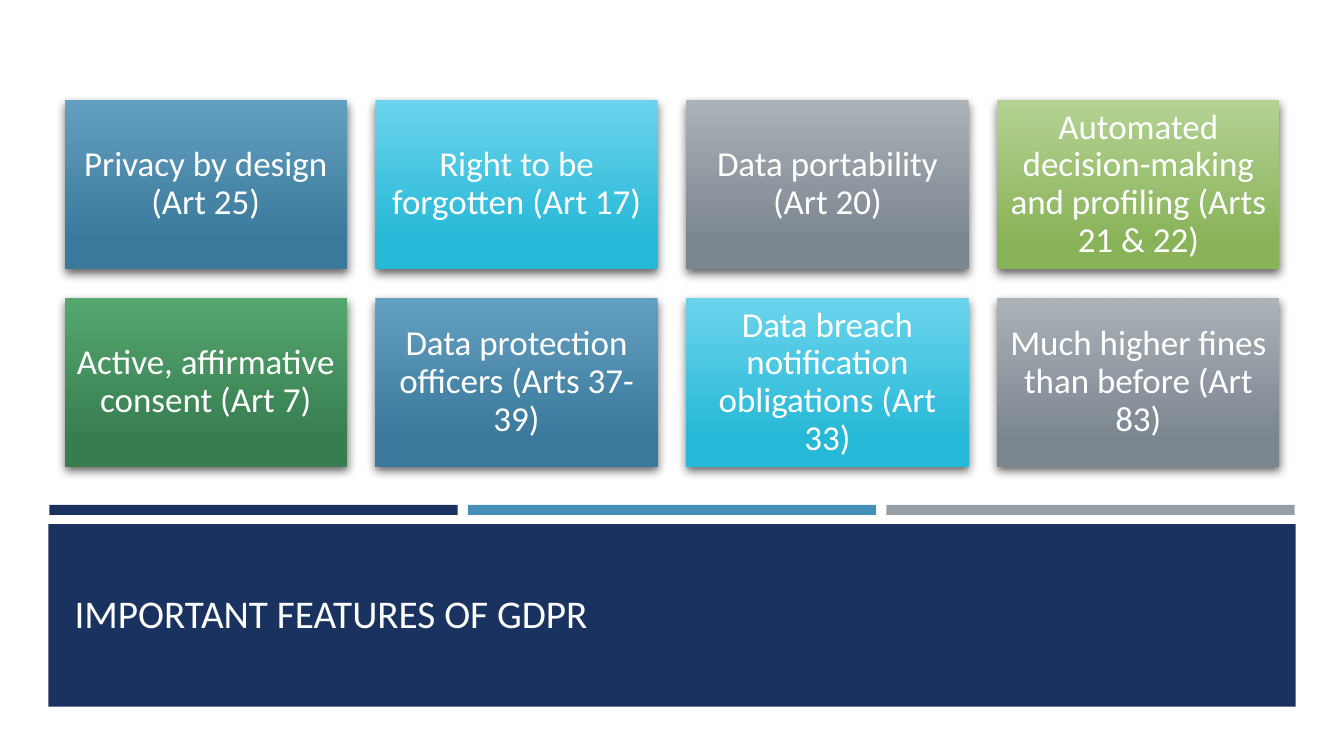
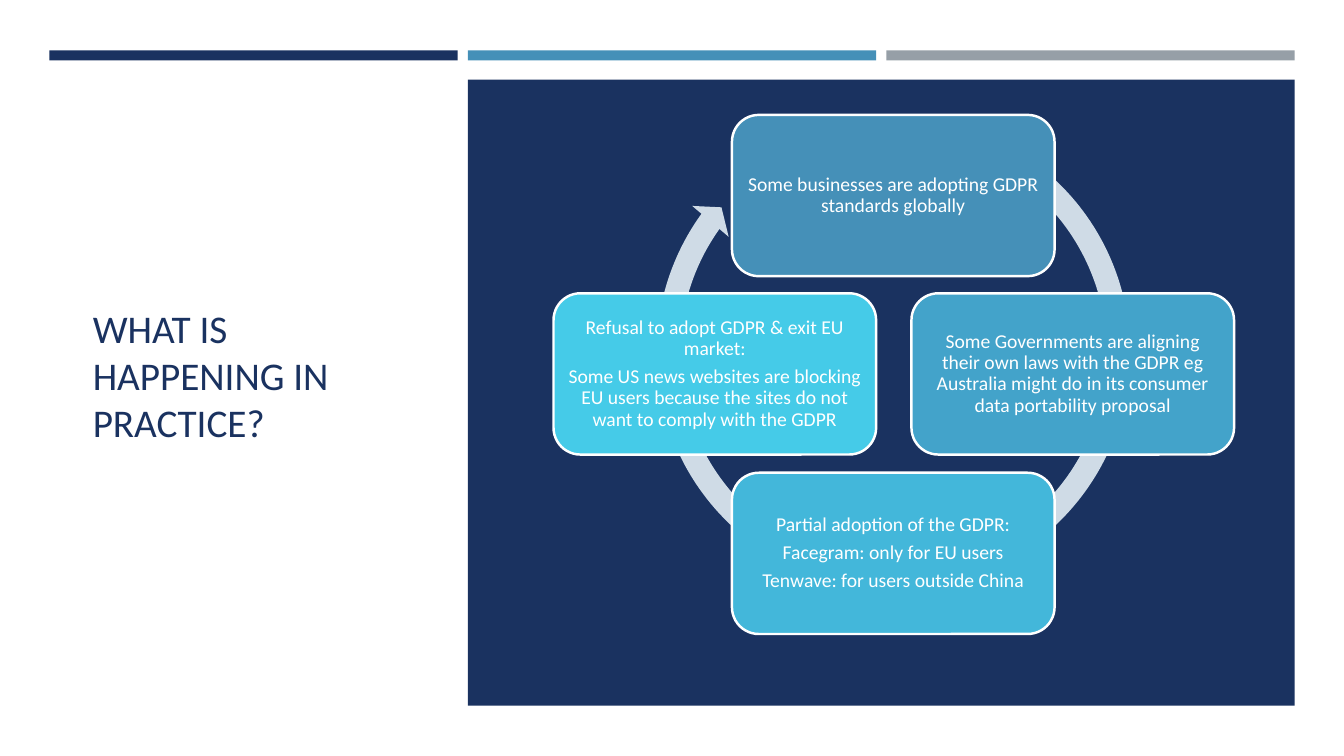
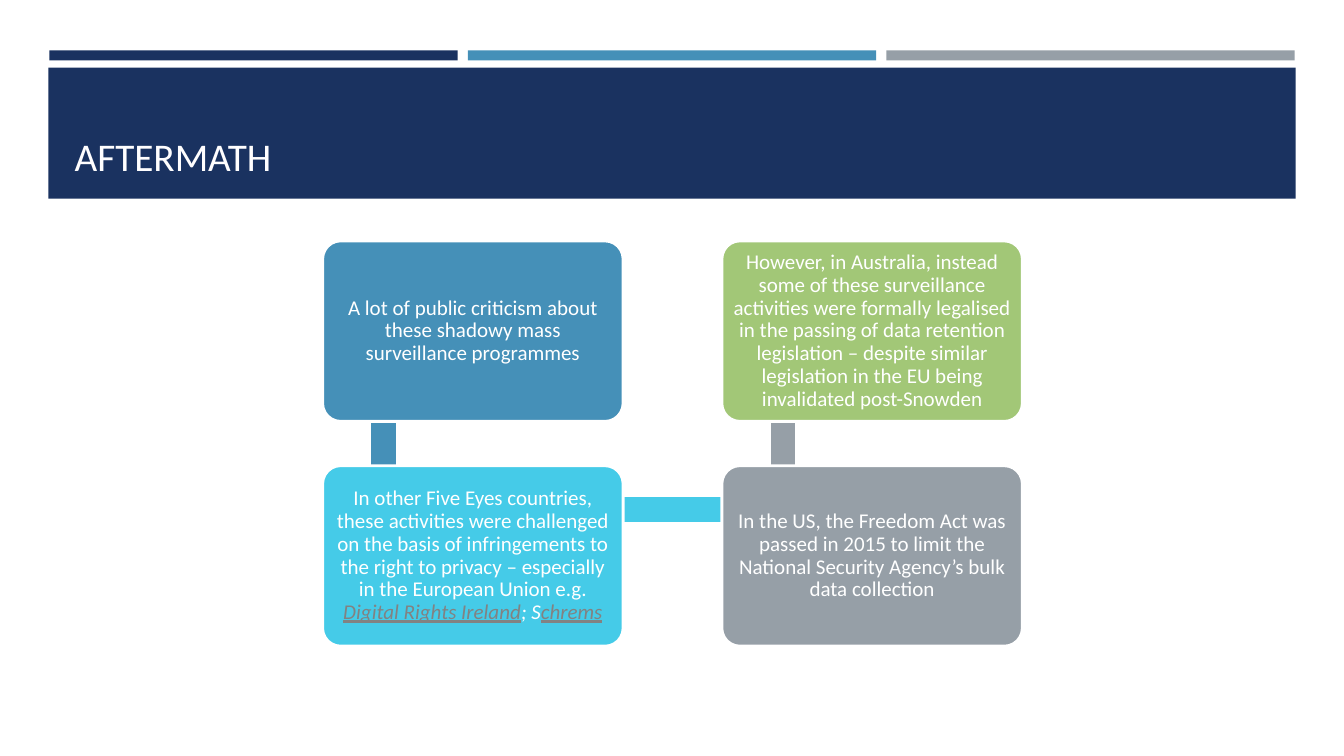
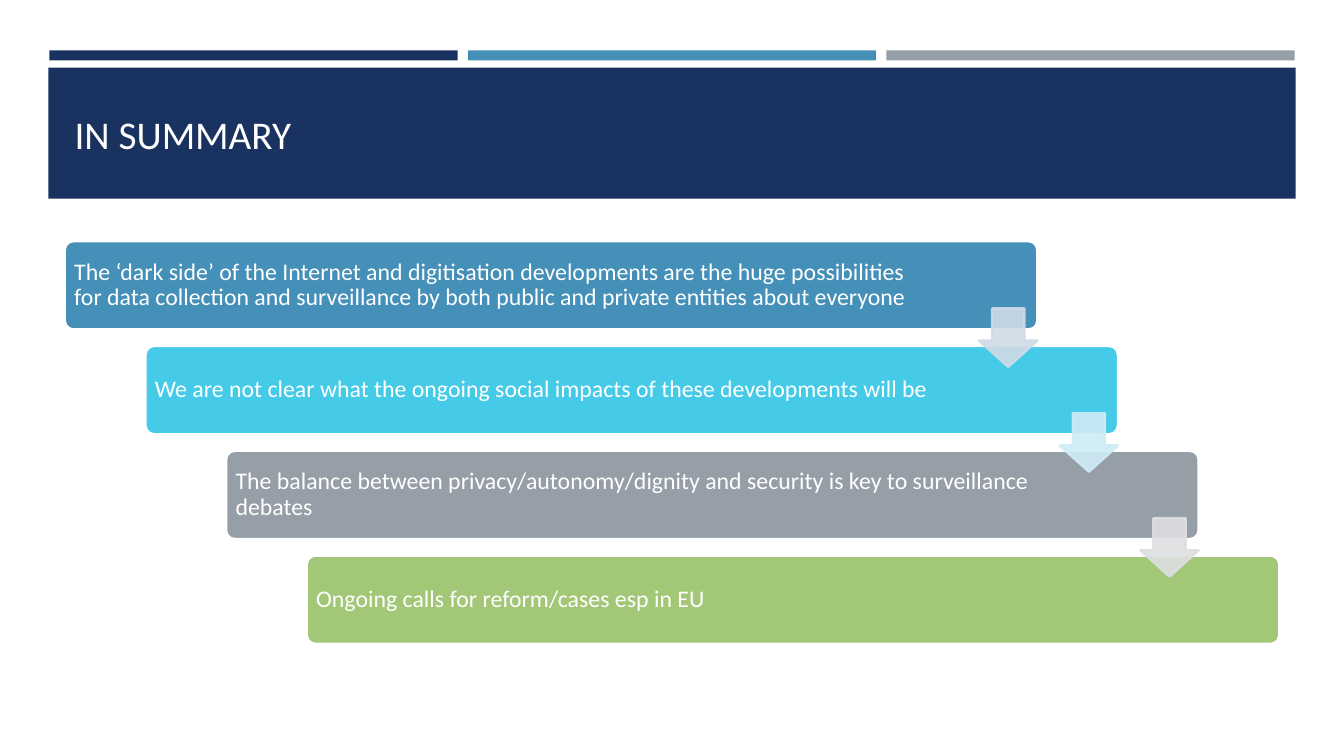
"""Build a four-slide deck on data protection and surveillance."""
from dataclasses import dataclass
from typing import Optional, Sequence, Union

from lxml import etree
from pptx import Presentation
from pptx.dml.color import RGBColor
from pptx.enum.shapes import MSO_SHAPE
from pptx.enum.text import MSO_ANCHOR, MSO_AUTO_SIZE, PP_ALIGN
from pptx.oxml.ns import qn
from pptx.presentation import Presentation as Deck
from pptx.shapes.autoshape import Shape
from pptx.slide import Slide
from pptx.text.text import TextFrame
from pptx.util import Inches, Pt

RECT = MSO_SHAPE.RECTANGLE
ROUNDED = MSO_SHAPE.ROUNDED_RECTANGLE
DOWN_ARROW = MSO_SHAPE.DOWN_ARROW
CIRCULAR_ARROW = MSO_SHAPE.CIRCULAR_ARROW
MIDDLE, BOTTOM = MSO_ANCHOR.MIDDLE, MSO_ANCHOR.BOTTOM
LEFT, CENTER = PP_ALIGN.LEFT, PP_ALIGN.CENTER
NO_AUTOFIT = MSO_AUTO_SIZE.NONE

FONT = "Calibri"
TITLE_ONLY_LAYOUT = 5
NAVY, BLUE, CYAN, GREY, GREEN = "1A3260", "4590B8", "45CBE8", "969FA7", "A2C777"
WHITE, TITLE_WHITE, LINK_GREY = "FFFFFF", "FFFEFF", "828282"
BLUE_FADE, CYAN_FADE = ("639FC1", "3A799B"), ("6BD4EC", "26B8D7")
GREY_FADE, GREEN_FADE = ("ABB2B8", "7C868F"), ("B4D293", "89B359")
DARK_GREEN_FADE = ("55A770", "377D50")


@dataclass(frozen=True)
class Box:
    """A rectangle on the slide, in inches."""
    left: float
    top: float
    width: float
    height: float


@dataclass(frozen=True)
class Span:
    """A stretch of text with its own format."""
    text: str
    color: str = WHITE
    italic: bool = False
    underline: bool = False


Para = Union[str, Sequence[Span]]


@dataclass(frozen=True)
class Card:
    """A filled box with its place and paragraphs."""
    left: float
    top: float
    fill: str
    paras: Sequence[Para]


@dataclass(frozen=True)
class Feature:
    """A gradient tile of the feature grid."""
    text: str
    fade: tuple[str, str]


@dataclass(frozen=True)
class Step:
    """A stair of the summary, with the arrow that leads on from it."""
    text: str
    fill: str
    right_inset: float
    arrow: Optional[str] = None


FEATURES = (
    Feature("Privacy by design (Art 25)", BLUE_FADE),
    Feature("Right to be forgotten (Art 17)", CYAN_FADE),
    Feature("Data portability (Art 20)", GREY_FADE),
    Feature("Automated decision-making and profiling (Arts 21 & 22)", GREEN_FADE),
    Feature("Active, affirmative consent (Art 7)", DARK_GREEN_FADE),
    Feature("Data protection officers (Arts 37-39)", BLUE_FADE),
    Feature("Data breach notification obligations (Art 33)", CYAN_FADE),
    Feature("Much higher fines than before (Art 83)", GREY_FADE),
)

PRACTICES = (
    Card(7.26, 1.14, BLUE, ("Some businesses are adopting GDPR standards globally",)),
    Card(9.04, 2.91, "43A3CA", (
        "Some Governments are aligning their own laws with the GDPR eg "
        "Australia might do in its consumer data portability proposal",)),
    Card(7.26, 4.69, "43B7DA", (
        "Partial adoption of the GDPR:",
        "Facegram: only for EU users",
        "Tenwave: for users outside China")),
    Card(5.49, 2.91, CYAN, (
        "Refusal to adopt GDPR & exit EU market:",
        "Some US news websites are blocking EU users because the sites do not "
        "want to comply with the GDPR")),
)

EVENTS = (
    Card(3.2, 2.39, BLUE, (
        "A lot of public criticism about these shadowy mass surveillance programmes",)),
    Card(3.2, 4.62, CYAN, ((
        Span("In other Five Eyes countries, these activities were challenged on the "
             "basis of infringements to the right to privacy – especially in the "
             "European Union e.g. "),
        Span("Digital Rights Ireland", LINK_GREY, italic=True, underline=True),
        Span("; S", italic=True),
        Span("chrems", LINK_GREY, italic=True, underline=True)),)),
    Card(7.16, 4.62, GREY, (
        "In the US, the Freedom Act was passed in 2015 to limit the National "
        "Security Agency’s bulk data collection",)),
    Card(7.16, 2.39, GREEN, (
        "However, in Australia, instead some of these surveillance activities were "
        "formally legalised in the passing of data retention legislation – despite "
        "similar legislation in the EU being invalidated post-Snowden",)),
)

EVENT_LINKS = (
    (Box(3.67, 2.84, 0.27, 2.22), BLUE),
    (Box(3.8, 4.92, 3.95, 0.27), CYAN),
    (Box(7.63, 2.84, 0.27, 2.22), GREY),
)

STEPS = (
    Step("The ‘dark side’ of the Internet and digitisation developments are the huge "
         "possibilities for data collection and surveillance by both public and "
         "private entities about everyone", BLUE, 1.05, "CFDBE6"),
    Step("We are not clear what the ongoing social impacts of these developments "
         "will be", CYAN, 1.45, "CFECF6"),
    Step("The balance between privacy/autonomy/dignity and security is key to "
         "surveillance debates", GREY, 1.45, "DDDFE1"),
    Step("Ongoing calls for reform/cases esp in EU", GREEN, 1.45),
)


def rgb(color: str) -> RGBColor:
    """Turn a hex string into a colour."""
    return RGBColor.from_string(color)


def write(frame: TextFrame, paras: Sequence[Para], *, size: float, color: str = WHITE,
          align: PP_ALIGN = CENTER, anchor: MSO_ANCHOR = MIDDLE, inset: float = 0.1,
          right_inset: Optional[float] = None, line_spacing: float = 0.9,
          space_after: float = 0.35) -> None:
    """Fill a text frame with formatted paragraphs."""
    frame.word_wrap = True
    frame.auto_size = NO_AUTOFIT
    frame.vertical_anchor = anchor
    frame.margin_left = frame.margin_top = frame.margin_bottom = Inches(inset)
    frame.margin_right = Inches(inset if right_inset is None else right_inset)
    for index, content in enumerate(paras):
        para = frame.paragraphs[0] if index == 0 else frame.add_paragraph()
        para.alignment = align
        para.line_spacing = line_spacing
        para.space_before = Pt(0)
        para.space_after = Pt(round(size * space_after, 1))
        spans = (Span(content, color),) if isinstance(content, str) else content
        for span in spans:
            run = para.add_run()
            run.text = span.text
            run.font.name = FONT
            run.font.size = Pt(size)
            run.font.color.rgb = rgb(span.color)
            run.font.italic = span.italic
            run.font.underline = span.underline


def add_box(slide: Slide, kind: MSO_SHAPE, box: Box, fill: str, *,
            line: Optional[str] = None, line_width: float = 2,
            adjustments: Sequence[float] = ()) -> Shape:
    """Draw a flat preset shape."""
    shape = slide.shapes.add_shape(kind, Inches(box.left), Inches(box.top),
                                   Inches(box.width), Inches(box.height))
    shape.shadow.inherit = False
    shape.fill.solid()
    shape.fill.fore_color.rgb = rgb(fill)
    if line:
        shape.line.color.rgb = rgb(line)
        shape.line.width = Pt(line_width)
    else:
        shape.line.fill.background()
    for index, value in enumerate(adjustments):
        shape.adjustments[index] = value
    return shape


def fade(shape: Shape, colors: tuple[str, str]) -> None:
    """Fill a shape with a downward gradient."""
    shape.fill.gradient()
    shape.fill.gradient_angle = 270
    for stop, color, position in zip(shape.fill.gradient_stops, colors, (0, 0.84)):
        stop.color.rgb = rgb(color)
        stop.position = position


def cast_shadow(shape: Shape) -> None:
    """Give a shape a soft black shadow below it."""
    effects = shape.element.spPr.find(qn("a:effectLst"))
    shadow = etree.SubElement(effects, qn("a:outerShdw"), blurRad=str(Pt(7)),
                              dist=str(Pt(3)), dir="5040000", rotWithShape="0")
    black = etree.SubElement(shadow, qn("a:srgbClr"), val="000000")
    etree.SubElement(black, qn("a:alpha"), val="60000")


def make_translucent(shape: Shape, percent: int) -> None:
    """Set the opacity of a shape's fill and line."""
    for color in shape.element.spPr.iter(qn("a:srgbClr")):
        etree.SubElement(color, qn("a:alpha"), val=str(percent * 1000))


def add_page(deck: Deck, title: str, title_box: Box, panel: Box, *,
             stripe_top: float = 0.5, color: str = TITLE_WHITE,
             anchor: MSO_ANCHOR = MIDDLE) -> Slide:
    """Add a slide with three stripes, a navy panel and a title."""
    page = deck.slides.add_slide(deck.slide_layouts[TITLE_ONLY_LAYOUT])
    for index, fill in enumerate((NAVY, BLUE, GREY)):
        add_box(page, RECT, Box(0.49 + index * 4.15, stripe_top, 4.05, 0.1), fill)
    add_box(page, RECT, panel, NAVY)
    heading = page.shapes.title
    heading.left, heading.top = Inches(title_box.left), Inches(title_box.top)
    heading.width, heading.height = Inches(title_box.width), Inches(title_box.height)
    write(heading.text_frame, (title,), size=28, color=color, align=LEFT,
          anchor=anchor, line_spacing=1, space_after=0)
    heading.element.getparent().append(heading.element)
    return page


def add_banner_page(deck: Deck, title: str, anchor: MSO_ANCHOR) -> Slide:
    """Add a slide whose title stands in a banner at the top."""
    return add_page(deck, title, Box(0.64, 0.77, 12.06, 1.11),
                    Box(0.48, 0.67, 12.37, 1.3), anchor=anchor)


def build_features(deck: Deck) -> None:
    """Build the grid of GDPR features."""
    page = add_page(deck, "IMPORTANT FEATURES OF GDPR", Box(0.64, 5.3, 12.06, 1.11),
                    Box(0.48, 5.2, 12.37, 1.81), stripe_top=5.01, anchor=BOTTOM)
    columns, left, right, width, height = 4, 0.64, 12.69, 2.8, 1.68
    gap = (right - left - columns * width) / (columns - 1)
    for index, feature in enumerate(FEATURES):
        row, column = divmod(index, columns)
        tile = add_box(page, RECT, Box(left + column * (width + gap),
                                       0.99 + row * (height + gap), width, height),
                       feature.fade[0])
        fade(tile, feature.fade)
        cast_shadow(tile)
        write(tile.text_frame, (feature.text,), size=25)


def build_practice(deck: Deck) -> None:
    """Build the cycle of reactions to the GDPR."""
    page = add_page(deck, "WHAT IS HAPPENING IN PRACTICE?", Box(0.82, 1.14, 3.34, 5.15),
                    Box(4.64, 0.79, 8.2, 6.21), color=NAVY)
    add_box(page, CIRCULAR_ARROW, Box(6.39, 1.03, 4.94, 4.94), "CFDBE6",
            adjustments=(0.047, 2.729, 129.422, 179.557, 0.048))
    for card in PRACTICES:
        shape = add_box(page, ROUNDED, Box(card.left, card.top, 3.2, 1.6), card.fill,
                        line=WHITE, line_width=1.75)
        write(shape.text_frame, card.paras, size=14, inset=0.06)


def build_aftermath(deck: Deck) -> None:
    """Build the chain of events after the disclosures."""
    page = add_banner_page(deck, "AFTERMATH", BOTTOM)
    for box, fill in EVENT_LINKS:
        add_box(page, RECT, box, fill, line=WHITE)
    for card in EVENTS:
        shape = add_box(page, ROUNDED, Box(card.left, card.top, 2.98, 1.79), card.fill,
                        line=WHITE, adjustments=(0.1,))
        write(shape.text_frame, card.paras, size=15, inset=0.06)


def build_summary(deck: Deck) -> None:
    """Build the staircase of closing points."""
    page = add_banner_page(deck, "IN SUMMARY", MIDDLE)
    left, top, width, height, indent, drop = 0.64, 2.39, 9.65, 0.88, 0.8, 1.04
    arrow_size = 0.58
    for index, step in enumerate(STEPS):
        stair = add_box(page, ROUNDED, Box(left + index * indent, top + index * drop,
                                           width, height),
                        step.fill, line=WHITE, adjustments=(0.1,))
        write(stair.text_frame, (step.text,), size=17, align=LEFT, inset=0.07,
              right_inset=step.right_inset)
    for index, step in enumerate(STEPS):
        if step.arrow:
            arrow = add_box(page, DOWN_ARROW,
                            Box(left + width - arrow_size + index * indent,
                                top + 0.67 + index * drop, arrow_size, arrow_size),
                            step.arrow, line=step.arrow, line_width=1.75,
                            adjustments=(0.55, 0.45))
            make_translucent(arrow, 90)


def main() -> None:
    """Build and save the deck."""
    deck = Presentation()
    deck.slide_width, deck.slide_height = Inches(13.33), Inches(7.5)
    for build in (build_features, build_practice, build_aftermath, build_summary):
        build(deck)
    deck.save("out.pptx")


if __name__ == "__main__":
    main()
